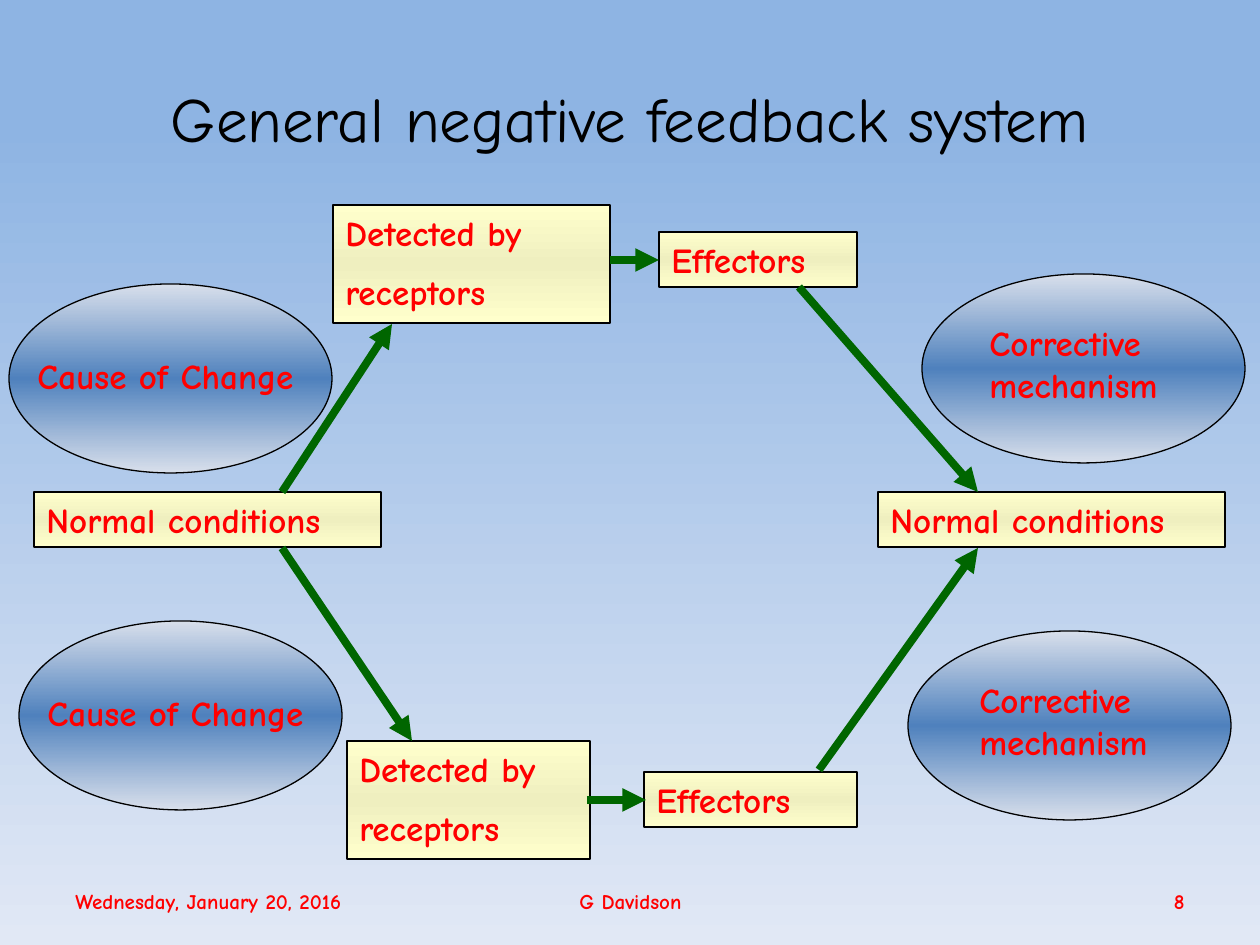
import copy

import pptx
import pptx.dml.color
import pptx.enum.shapes
import pptx.enum.text
import pptx.oxml.ns
import pptx.util
from lxml import etree

PX = 7257  # EMU in one px, 126 px to the inch
FONT = "Comic Neue"
RED, BLACK, GREEN = "FF0000", "000000", "006600"
BOX_STOPS = [(0, "FFFFCC"), (0.5, "EFEFBF"), (1, "FFFFCC")]
OVAL_STOPS = [(0, "D8DFEB"), (0.5, "4F81BD"), (1, "D8DFEB")]

color = pptx.dml.color.RGBColor.from_string
qn = pptx.oxml.ns.qn
Align = pptx.enum.text.PP_ALIGN
Anchor = pptx.enum.text.MSO_ANCHOR
Shape = pptx.enum.shapes.MSO_SHAPE


def set_gradient(fill, stops):
    """Fill from top to bottom with (position, hex colour) stops."""
    fill.gradient()
    fill.gradient_angle = 270
    first = fill.gradient_stops[0]._gs
    for _ in range(len(stops) - 2):
        first.addnext(copy.deepcopy(first))
    for stop, (position, hex_color) in zip(fill.gradient_stops, stops):
        stop.position = position
        stop.color.rgb = color(hex_color)


def write(shape, lines, size=20, hex_color=RED, bold=True,
          align=Align.LEFT, anchor=Anchor.TOP):
    frame = shape.text_frame
    frame.word_wrap = True
    frame.vertical_anchor = anchor
    for index, line in enumerate(lines):
        paragraph = frame.add_paragraph() if index else frame.paragraphs[0]
        paragraph.alignment = align
        paragraph.space_before = pptx.util.Pt(10 if index else 0)
        run = paragraph.add_run()
        run.text = line
        run.font.name = FONT
        run.font.size = pptx.util.Pt(size)
        run.font.bold = bold
        run.font.color.rgb = color(hex_color)


presentation = pptx.Presentation()
presentation.slide_width = 1260 * PX
presentation.slide_height = 945 * PX
slide = presentation.slides.add_slide(presentation.slide_layouts[6])
set_gradient(slide.background.fill, [(0.13, "8EB4E3"), (1, "E1E8F5")])

# Title
title = slide.shapes.add_textbox(63 * PX, 38 * PX, 1134 * PX, 158 * PX)
write(title, ["General negative feedback system"], 36, BLACK, False,
      Align.CENTER, Anchor.MIDDLE)

# Footer
for left, width, text, align in [
    (63, 418, "Wednesday, January 20, 2016", Align.LEFT),
    (431, 399, "G Davidson", Align.CENTER),
    (903, 294, "8", Align.RIGHT),
]:
    footer = slide.shapes.add_textbox(left * PX, 876 * PX, width * PX, 50 * PX)
    write(footer, [text], 12, align=align, anchor=Anchor.MIDDLE)

# Stages of the feedback loop
for left, top, width, height, lines in [
    (347, 741, 243, 118, ["Detected by", "receptors"]),
    (644, 772, 213, 55, ["Effectors"]),
    (333, 205, 277, 118, ["Detected by", "receptors"]),
    (659, 232, 198, 55, ["Effectors"]),
    (878, 492, 347, 55, ["Normal conditions"]),
    (34, 492, 347, 55, ["Normal conditions"]),
]:
    box = slide.shapes.add_shape(
        Shape.RECTANGLE, left * PX, top * PX, width * PX, height * PX)
    box.shadow.inherit = False
    set_gradient(box.fill, BOX_STOPS)
    box.line.color.rgb = color(BLACK)
    box.line.width = pptx.util.Pt(0.75)
    write(box, lines)

# Ovals, each grouped with its caption
for left, top, caption_left, caption_top, width, height, text in [
    (9, 284, 25, 348, 348, 55, "Cause of Change"),
    (19, 621, 35, 685, 348, 55, "Cause of Change"),
    (922, 274, 977, 315, 238, 97, "Corrective mechanism"),
    (908, 631, 967, 672, 238, 97, "Corrective mechanism"),
]:
    group = slide.shapes.add_group_shape()
    oval = group.shapes.add_shape(
        Shape.OVAL, left * PX, top * PX, 323 * PX, 189 * PX)
    oval.shadow.inherit = False
    set_gradient(oval.fill, OVAL_STOPS)
    oval.line.color.rgb = color(BLACK)
    oval.line.width = pptx.util.Pt(0.75)
    caption = group.shapes.add_textbox(
        caption_left * PX, caption_top * PX, width * PX, height * PX)
    write(caption, [text])

# Arrows
for start_x, start_y, end_x, end_y in [
    (610, 260, 659, 260),
    (282, 492, 392, 324),
    (282, 548, 412, 741),
    (819, 770, 978, 548),
    (799, 287, 978, 492),
    (587, 800, 646, 800),
]:
    arrow = slide.shapes.add_connector(
        pptx.enum.shapes.MSO_CONNECTOR.STRAIGHT,
        start_x * PX, start_y * PX, end_x * PX, end_y * PX)
    arrow.line.color.rgb = color(GREEN)
    arrow.line.width = pptx.util.Pt(4.5)
    properties = arrow._element.spPr
    etree.SubElement(properties.find(qn("a:ln")), qn("a:tailEnd"), type="triangle")
    etree.SubElement(properties, qn("a:effectLst"))

presentation.save("out.pptx")
